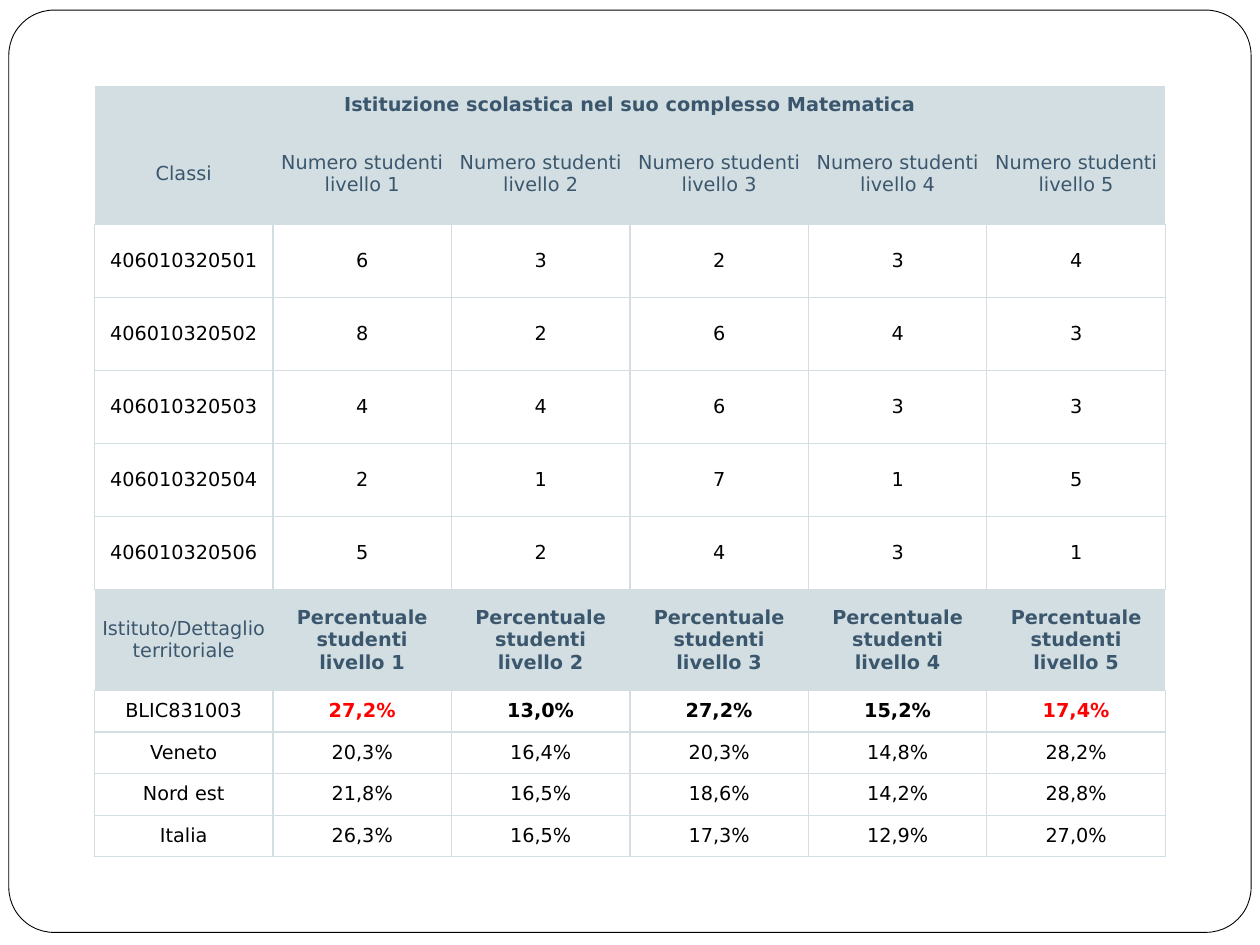
from lxml import etree
from pptx import Presentation
from pptx.dml.color import RGBColor
from pptx.enum.shapes import MSO_SHAPE
from pptx.enum.text import MSO_ANCHOR, PP_ALIGN
from pptx.oxml.ns import qn
from pptx.util import Inches, Pt

INK, SLATE, MIST, WHITE, RED = "000000", "3B576D", "D3DEE2", "FFFFFF", "FF0000"


def rgb(color):
    return RGBColor.from_string(color)


def set_borders(cell, sides):
    """Draw the given sides (letters of LRTB) and blank the others; call before filling."""
    tcPr = cell._tc.get_or_add_tcPr()
    for side in "LRTB":
        ln = etree.SubElement(tcPr, qn("a:ln" + side), w=str(Pt(0.75)))
        if side in sides:
            fill = etree.SubElement(ln, qn("a:solidFill"))
            etree.SubElement(fill, qn("a:srgbClr"), val=MIST)
        else:
            etree.SubElement(ln, qn("a:noFill"))


prs = Presentation()
prs.slide_width, prs.slide_height = Inches(10), Inches(7.5)
s = prs.slides.add_slide(prs.slide_layouts[6])

frame = s.shapes.add_shape(MSO_SHAPE.ROUNDED_RECTANGLE, Inches(0.07), Inches(0.08),
                           Inches(9.86), Inches(7.32))
frame.adjustments[0] = 0.049
frame.shadow.inherit = False
frame.fill.solid()
frame.fill.fore_color.rgb = rgb(WHITE)
frame.line.color.rgb = rgb(INK)
frame.line.width = Pt(0.5)

levels = range(1, 6)
rows = [
    ["Istituzione scolastica nel suo complesso Matematica"] + [""] * 5,
    ["Classi"] + [f"Numero studenti\nlivello {n}" for n in levels],
    ["406010320501", "6", "3", "2", "3", "4"],
    ["406010320502", "8", "2", "6", "4", "3"],
    ["406010320503", "4", "4", "6", "3", "3"],
    ["406010320504", "2", "1", "7", "1", "5"],
    ["406010320506", "5", "2", "4", "3", "1"],
    ["Istituto/Dettaglio territoriale"] + [f"Percentuale studenti\nlivello {n}" for n in levels],
    ["BLIC831003", "27,2%", "13,0%", "27,2%", "15,2%", "17,4%"],
    ["Veneto", "20,3%", "16,4%", "20,3%", "14,8%", "28,2%"],
    ["Nord est", "21,8%", "16,5%", "18,6%", "14,2%", "28,8%"],
    ["Italia", "26,3%", "16,5%", "17,3%", "12,9%", "27,0%"],
]
TITLE, COUNT_HEAD, PERCENT_HEAD, SCHOOL = 0, 1, 7, 8
head_sides = {TITLE: "", COUNT_HEAD: "B", PERCENT_HEAD: "TB"}
heights = [0.3, 0.8] + [0.58] * 5 + [0.8] + [0.33] * 4

table = s.shapes.add_table(len(rows), 6, Inches(0.75), Inches(0.68),
                           Inches(8.5), Inches(sum(heights))).table
for col in table.columns:
    col.width = Inches(8.5 / 6)
for row, height in zip(table.rows, heights):
    row.height = Inches(height)
table.cell(TITLE, 0).merge(table.cell(TITLE, 5))

for i, values in enumerate(rows):
    is_head = i in head_sides
    inset = Inches(0.02 if is_head else 0.03)
    for j, text in enumerate(values):
        cell = table.cell(i, j)
        set_borders(cell, head_sides.get(i, "LRTB"))
        cell.fill.solid()
        cell.fill.fore_color.rgb = rgb(MIST if is_head else WHITE)
        cell.vertical_anchor = MSO_ANCHOR.MIDDLE
        cell.margin_left = cell.margin_right = inset
        cell.margin_top = cell.margin_bottom = inset
        if not text:
            continue

        color = SLATE if is_head else INK
        if i == SCHOOL and j in (1, 5):
            color = RED
        p = cell.text_frame.paragraphs[0]
        p.alignment = PP_ALIGN.CENTER
        for k, line in enumerate(text.split("\n")):
            if k:
                p.add_line_break()
            r = p.add_run()
            r.text = line
            r.font.name = "DejaVu Sans"
            r.font.size = Pt(11)
            r.font.bold = i == TITLE or (i in (PERCENT_HEAD, SCHOOL) and j > 0)
            r.font.color.rgb = rgb(color)

prs.save("out.pptx")
